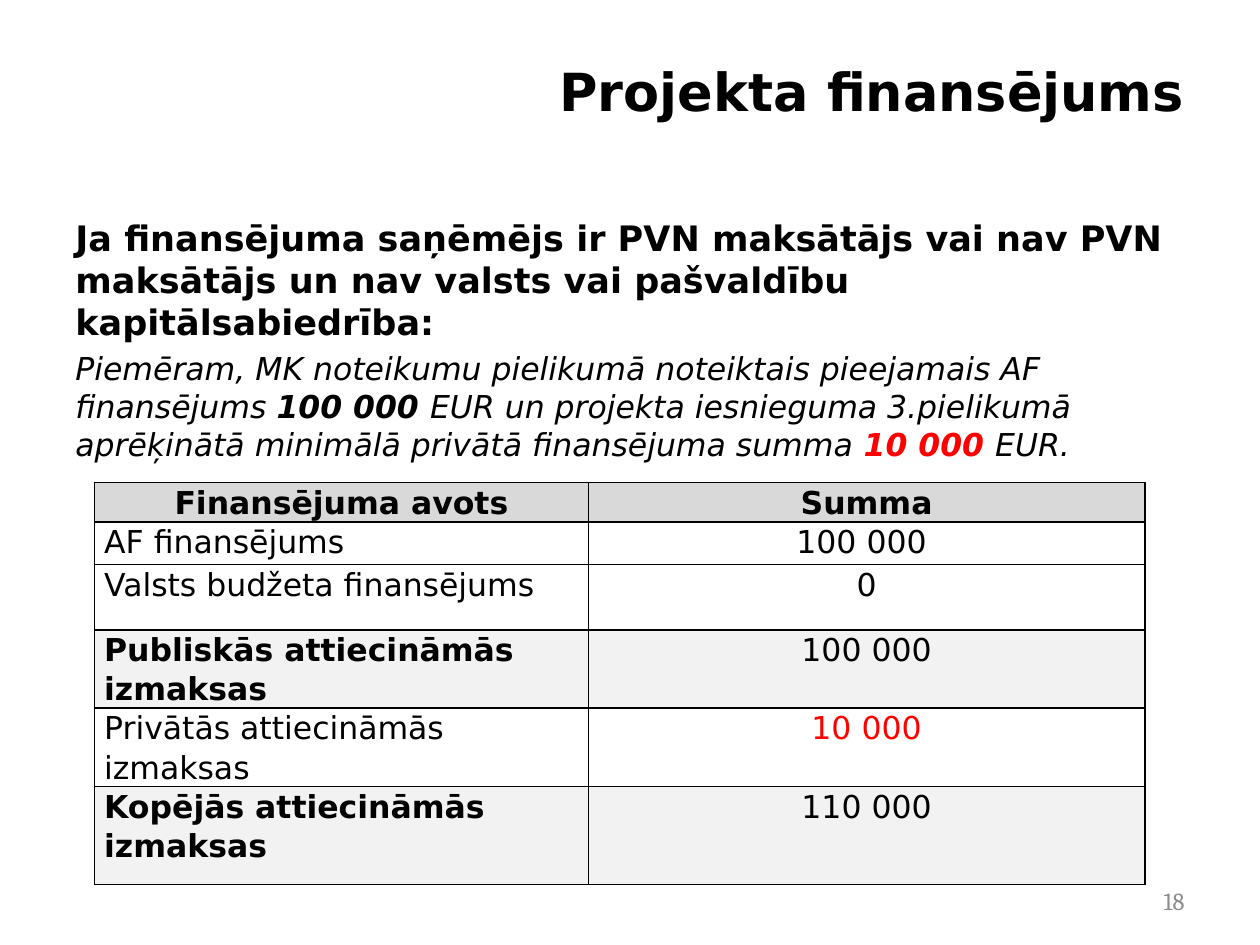
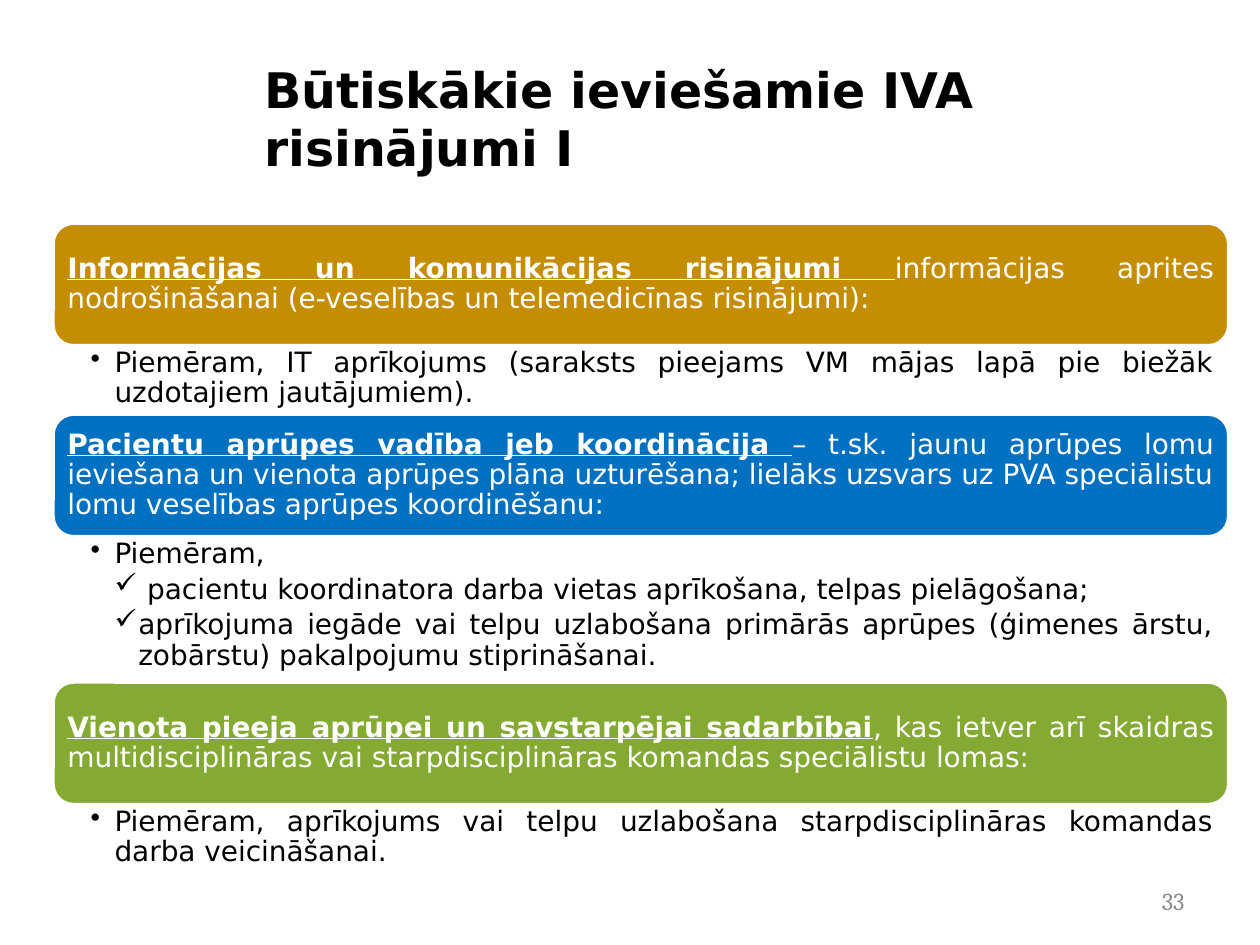
from lxml import etree
from pptx import Presentation
from pptx.dml.color import RGBColor
from pptx.enum.shapes import MSO_SHAPE
from pptx.enum.text import MSO_ANCHOR, MSO_AUTO_SIZE, PP_ALIGN
from pptx.oxml.ns import qn
from pptx.util import Cm, Pt

ROUND = MSO_SHAPE.ROUNDED_RECTANGLE
TOP, MIDDLE = MSO_ANCHOR.TOP, MSO_ANCHOR.MIDDLE
FIXED = MSO_AUTO_SIZE.NONE
LEFT, CENTER, RIGHT, FULL = PP_ALIGN.LEFT, PP_ALIGN.CENTER, PP_ALIGN.RIGHT, PP_ALIGN.JUSTIFY

BLACK = RGBColor(0x00, 0x00, 0x00)
WHITE = RGBColor(0xFF, 0xFF, 0xFF)
RED = RGBColor(0xFF, 0x00, 0x00)
GRAY = RGBColor(0x8C, 0x8C, 0x8C)
SILVER = RGBColor(0xD9, 0xD9, 0xD9)
PALE = RGBColor(0xF2, 0xF2, 0xF2)
GOLD = RGBColor(0xC5, 0x8D, 0x01)
BLUE = RGBColor(0x00, 0x70, 0xC0)
GREEN = RGBColor(0x84, 0xAA, 0x33)

BASE = {"name": "DejaVu Sans", "rgb": BLACK, "bold": False}
HEAD = {**BASE, "bold": True}
LEAD = {**HEAD, "size": Pt(20)}
NOTE = {**BASE, "size": Pt(18), "italic": True}
CELL = {**BASE, "size": Pt(18)}
ITEM = {**BASE, "size": Pt(16)}
BAND = {**ITEM, "rgb": WHITE}
PAGE = {"name": "Cambria", "size": Pt(14), "rgb": GRAY}
STRONG = {"bold": True}
KEY = {"bold": True, "underline": True}


def write(par, runs, look, **form):
    for key, val in form.items():
        setattr(par, key, val)
    for text, extra in runs:
        run = par.add_run()
        run.text = text
        for key, val in {**look, **extra}.items():
            if key == "rgb":
                run.font.color.rgb = val
            else:
                setattr(run.font, key, val)


def fit(frame, pads, anchor):
    form = {"word_wrap": True, "auto_size": FIXED, "vertical_anchor": anchor}
    sides = ("margin_left", "margin_top", "margin_right", "margin_bottom")
    form.update(zip(sides, map(Cm, pads)))
    for key, val in form.items():
        setattr(frame, key, val)
    return frame


deck = Presentation()
deck.slide_width, deck.slide_height = Cm(25.4), Cm(19.05)

slides = []
for plan, title, size, align, page in (
    (1, "Projekta finansējums", 30, RIGHT, "18"),
    (5, "Būtiskākie ieviešamie IVA risinājumi I", 28, LEFT, "33"),
):
    slide = deck.slides.add_slide(deck.slide_layouts[plan])
    slides.append(slide)
    name = slide.shapes.title
    name.left, name.top, name.width, name.height = Cm(5.08), Cm(0.76), Cm(19.05), Cm(3.18)
    frame = fit(name.text_frame, (0.25, 0.43, 0.25, 0.13), TOP)
    write(frame.paragraphs[0], [(title, {})], {**HEAD, "size": Pt(size)}, alignment=align)
    foot = slide.shapes.add_textbox(Cm(18.21), Cm(17.65), Cm(5.92), Cm(1.02))
    frame = fit(foot.text_frame, (0.25, 0.13, 0.25, 0.13), MIDDLE)
    write(frame.paragraphs[0], [(page, {})], PAGE, alignment=RIGHT)

funds, tools = slides

body = funds.placeholders[1]
body.left, body.top, body.width, body.height = Cm(1.27), Cm(4.24), Cm(22.86), Cm(12.78)
frame = fit(body.text_frame, (0.25, 0.13, 0.25, 0.13), TOP)
texts = (
    (LEAD, 0, [("Ja finansējuma saņēmējs ir PVN maksātājs vai nav PVN maksātājs un nav valsts vai pašvaldību kapitālsabiedrība:", {})]),
    (NOTE, 3.6, [
        ("Piemēram, MK noteikumu pielikumā noteiktais pieejamais AF finansējums ", {}),
        ("100 000 ", STRONG),
        ("EUR un projekta iesnieguma 3.pielikumā aprēķinātā minimālā privātā finansējuma summa ", {}),
        ("10 000 ", {"bold": True, "rgb": RED}),
        ("EUR.", {}),
    ]),
)
for spot, (look, gap, runs) in enumerate(texts):
    par = frame.add_paragraph() if spot else frame.paragraphs[0]
    props = par._p.get_or_add_pPr()
    props.set("marL", "0")
    props.set("indent", "0")
    etree.SubElement(props, qn("a:buNone"))
    write(par, runs, look, space_before=Pt(gap), alignment=LEFT)

rows = (
    (0.79, SILVER, CENTER, ("Finansējuma avots", STRONG), ("Summa", STRONG)),
    (0.86, None, LEFT, ("AF finansējums", {}), ("100 000 ", {})),
    (1.32, None, LEFT, ("Valsts budžeta finansējums", {}), ("0", {})),
    (1.14, PALE, LEFT, ("Publiskās attiecināmās izmaksas", STRONG), ("100 000", {})),
    (1.17, None, LEFT, ("Privātās attiecināmās izmaksas", {}), ("10 000", {"rgb": RED})),
    (1.98, PALE, LEFT, ("Kopējās attiecināmās izmaksas", STRONG), ("110 000", {})),
)
grid = funds.shapes.add_table(len(rows), 2, Cm(1.91), Cm(9.73), Cm(21.17), Cm(7.26)).table
grid.columns[0].width, grid.columns[1].width = Cm(9.95), Cm(11.22)
for line, (tall, tint, align, *pair) in zip(grid.rows, rows):
    line.height = Cm(tall)
    for cell, run, side in zip(line.cells, pair, (align, CENTER)):
        cell.margin_left = cell.margin_right = Cm(0.19)
        cell.margin_top = cell.margin_bottom = 0
        write(cell.text_frame.paragraphs[0], [run], CELL, alignment=side, line_spacing=1.07)
        if tint is None:
            cell.fill.background()
        else:
            cell.fill.solid()
            cell.fill.fore_color.rgb = tint
        props = cell._tc.get_or_add_tcPr()
        for spot, edge in enumerate(("a:lnL", "a:lnR", "a:lnT", "a:lnB")):
            rule = etree.Element(qn(edge), w=str(Pt(1)))
            paint = etree.SubElement(rule, qn("a:solidFill"))
            etree.SubElement(paint, qn("a:srgbClr"), val=str(BLACK))
            props.insert(spot, rule)

DOT, TICK = (1, "•"), (2, "✓")
parts = (
    (GOLD, 1.38, "Informācijas un komunikācijas risinājumi ",
     "informācijas aprites nodrošināšanai (e-veselības un telemedicīnas risinājumi):",
     [(DOT, "Piemēram, IT aprīkojums (saraksts pieejams VM mājas lapā pie biežāk uzdotajiem jautājumiem).")]),
    (BLUE, 2.93, "Pacientu aprūpes vadība jeb koordinācija ",
     "– t.sk. jaunu aprūpes lomu ieviešana un vienota aprūpes plāna uzturēšana; lielāks uzsvars uz PVA speciālistu lomu veselības aprūpes koordinēšanu:",
     [(DOT, "Piemēram,"),
      (TICK, " pacientu koordinatora darba vietas aprīkošana, telpas pielāgošana;"),
      (TICK, "aprīkojuma iegāde vai telpu uzlabošana primārās aprūpes (ģimenes ārstu, zobārstu) pakalpojumu stiprināšanai.")]),
    (GREEN, 1.38, "Vienota pieeja aprūpei un savstarpējai sadarbībai",
     ", kas ietver arī skaidras multidisciplināras vai starpdisciplināras komandas speciālistu lomas:",
     [(DOT, "Piemēram, aprīkojums vai telpu uzlabošana starpdisciplināras komandas darba veicināšanai.")]),
)
left, wide, high, step = Cm(1.07), Cm(23.7), Cm(2.47), Cm(0.48)
top = Cm(4.5)
for tint, tall, key, rest, items in parts:
    band = tools.shapes.add_shape(ROUND, left, top, wide, high)
    band.shadow.inherit = False
    band.fill.solid()
    band.fill.fore_color.rgb = tint
    band.line.color.rgb = WHITE
    band.line.width = Pt(2)
    frame = fit(band.text_frame, (0.17, 0.17, 0.17, 0.17), MIDDLE)
    write(frame.paragraphs[0], [(key, KEY), (rest, {})], BAND, alignment=FULL, line_spacing=0.9)
    top += high
    area = tools.shapes.add_textbox(left, top, wide, Cm(tall))
    frame = fit(area.text_frame, (0.76, 0.05, 0.3, 0.05), TOP)
    for spot, ((depth, mark), text) in enumerate(items):
        par = frame.add_paragraph() if spot else frame.paragraphs[0]
        props = par._p.get_or_add_pPr()
        props.set("marL", str(depth * step))
        props.set("indent", str(-step))
        etree.SubElement(props, qn("a:buChar"), char=mark)
        write(par, [(text, {})], ITEM, alignment=FULL, line_spacing=0.9, space_after=Pt(3.2))
    top += Cm(tall)

deck.save("out.pptx")
